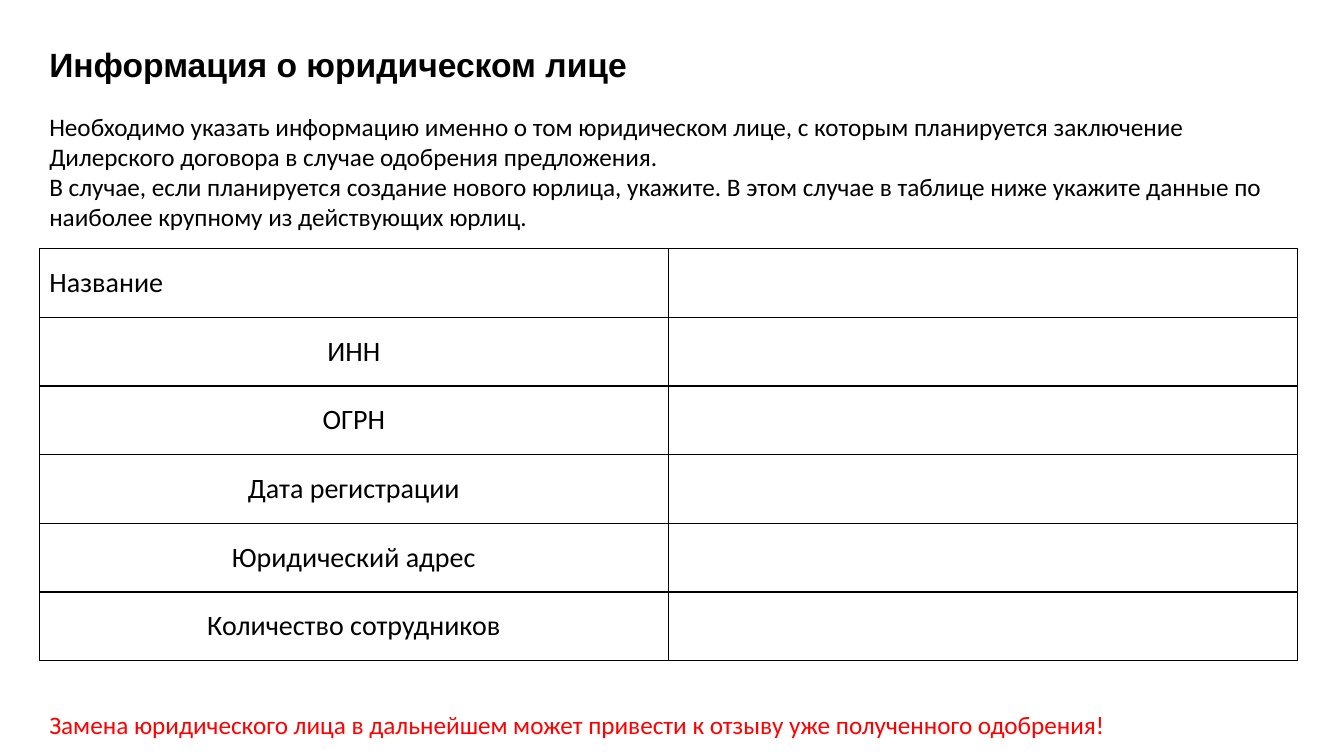
from dataclasses import dataclass

from lxml.etree import SubElement
from pptx import Presentation
from pptx.dml.color import RGBColor
from pptx.enum.text import MSO_ANCHOR, PP_ALIGN
from pptx.oxml.ns import qn
from pptx.util import Inches, Pt


@dataclass(frozen=True)
class Theme:
    heading_font: str = "Arial"
    body_font: str = "Calibri"
    ink: str = "000000"
    alert: str = "FF0000"
    paper: str = "FFFFFF"
    heading_size: int = 24
    body_size: int = 18
    table_size: int = 20
    border_width: int = 1


class FormSlide:
    def __init__(self, deck, theme):
        self.deck = deck
        self.theme = theme
        self.slide = deck.slides.add_slide(deck.slide_layouts[6])

    def area(self, left, top, width, height):
        across, down = self.deck.slide_width, self.deck.slide_height
        return (int(across * left / 100), int(down * top / 100),
                int(across * width / 100), int(down * height / 100))

    def add_wording(self, paragraph, wording, font, size, color, bold=False):
        run = paragraph.add_run()
        run.text = wording
        run.font.name = font
        run.font.size = Pt(size)
        run.font.bold = bold
        run.font.color.rgb = RGBColor.from_string(color)

    def text(self, share, paragraphs, font, size, color, bold=False):
        frame = self.slide.shapes.add_textbox(*self.area(*share)).text_frame
        frame.word_wrap = True
        for index, wording in enumerate(paragraphs):
            paragraph = frame.add_paragraph() if index else frame.paragraphs[0]
            self.add_wording(paragraph, wording, font, size, color, bold)

    def heading(self, share, wording):
        theme = self.theme
        self.text(share, [wording], theme.heading_font, theme.heading_size, theme.ink, True)

    def body(self, share, paragraphs, color):
        self.text(share, paragraphs, self.theme.body_font, self.theme.body_size, color)

    def border(self, cell):
        properties = cell._tc.get_or_add_tcPr()
        for side in ("a:lnL", "a:lnR", "a:lnT", "a:lnB"):
            line = SubElement(properties, qn(side), w=str(Pt(self.theme.border_width)))
            paint = SubElement(line, qn("a:solidFill"))
            SubElement(paint, qn("a:srgbClr"), val=self.theme.ink)

    def form(self, share, fields):
        theme = self.theme
        table = self.slide.shapes.add_table(len(fields), 2, *self.area(*share)).table
        table.first_row = False
        table.horz_banding = False
        for cell in table.iter_cells():
            self.border(cell)
            cell.fill.solid()
            cell.fill.fore_color.rgb = RGBColor.from_string(theme.paper)
            cell.vertical_anchor = MSO_ANCHOR.MIDDLE
        for row, field in enumerate(fields):
            label = table.cell(row, 0).text_frame.paragraphs[0]
            label.alignment = PP_ALIGN.CENTER if row else PP_ALIGN.LEFT
            self.add_wording(label, field, theme.body_font, theme.table_size, theme.ink)


def main():
    deck = Presentation()
    deck.slide_width = Inches(13.33)
    deck.slide_height = Inches(7.5)
    theme = Theme()
    page = FormSlide(deck, theme)
    margin, text_width = 2.93, 94.8

    page.heading((margin, 5.2, 86.3, 10.5), "Информация о юридическом лице")
    page.form((margin, 32.9, 93.6, 54.5), [
        "Название",
        "ИНН",
        "ОГРН",
        "Дата регистрации",
        "Юридический адрес",
        "Количество сотрудников",
    ])
    page.body((margin, 14, text_width, 18), [
        "Необходимо указать информацию именно о том юридическом лице, с которым "
        "планируется заключение Дилерского договора в случае одобрения предложения.",
        "В случае, если планируется создание нового юрлица, укажите. В этом случае "
        "в таблице ниже укажите данные по наиболее крупному из действующих юрлиц.",
    ], theme.ink)
    page.body((margin, 93.1, text_width, 5.4), [
        "Замена юридического лица в дальнейшем может привести к отзыву уже "
        "полученного одобрения!",
    ], theme.alert)
    deck.save("out.pptx")


if __name__ == "__main__":
    main()
